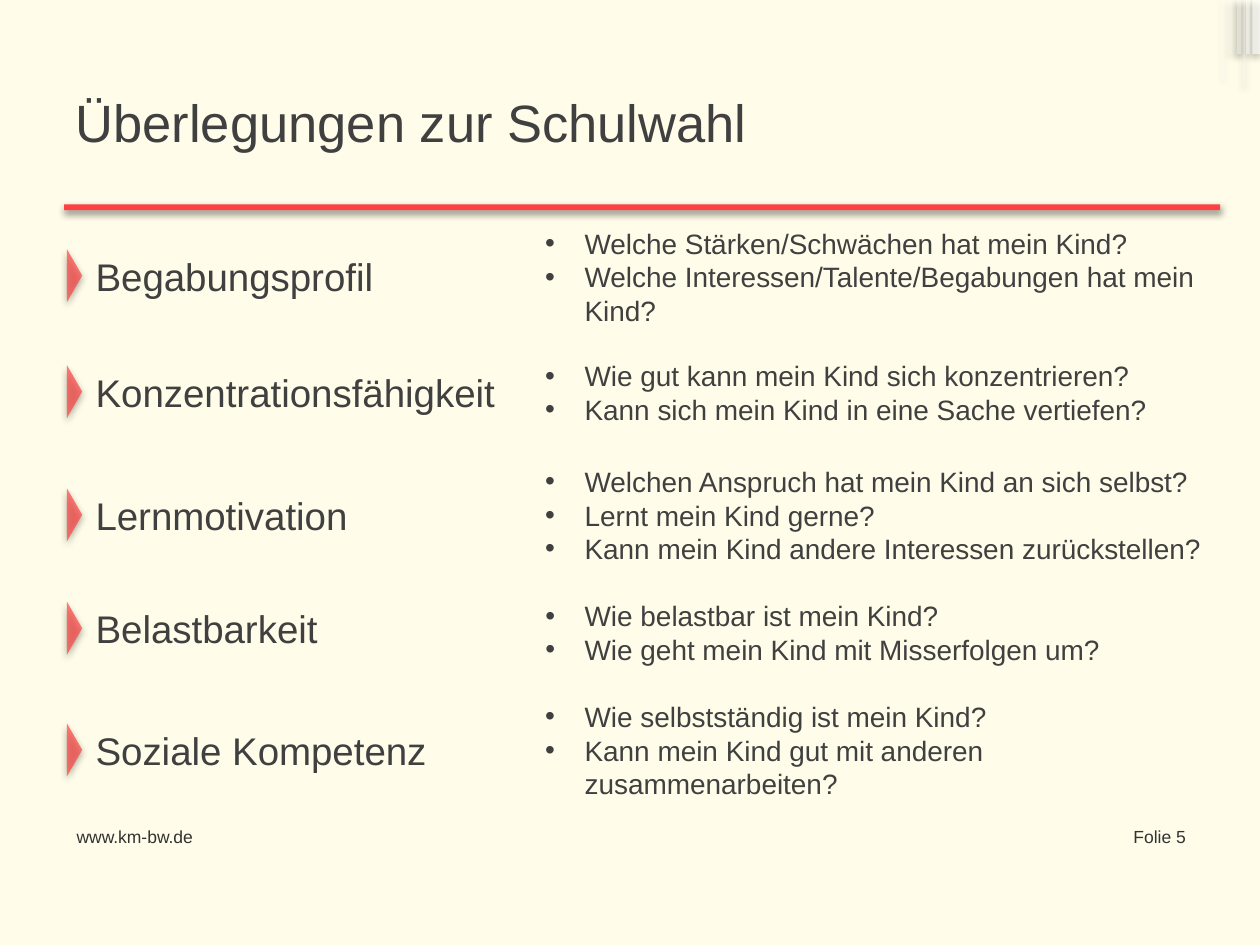
import pptx
import pptx.dml.color
import pptx.enum.shapes
import pptx.enum.text
import pptx.oxml
import pptx.oxml.ns
import pptx.util
from lxml import etree

Pt = pptx.util.Pt
RGB = pptx.dml.color.RGBColor
SHAPE = pptx.enum.shapes.MSO_SHAPE
ALIGN = pptx.enum.text.PP_ALIGN
ANCHOR = pptx.enum.text.MSO_ANCHOR
qn = pptx.oxml.ns.qn

CREAM = RGB(0xFF, 0xFD, 0xE9)
RED = RGB(0xFF, 0x40, 0x40)
WHITE = RGB(0xFF, 0xFF, 0xFF)
DARK = RGB(0x40, 0x40, 0x40)
FOOTER = RGB(0x32, 0x32, 0x32)

ROW_HEIGHT = 57
LABEL_LEFT = 47.5
DETAIL_LEFT = 304.5
ARROW_HEIGHT = 30.2

# top, label, label width, shift of the questions, width of the questions, questions
ROWS = [
    (129, "Begabungsprofil", 182, 0.5, 391.7, [
        "Welche Stärken/Schwächen hat mein Kind?",
        "Welche Interessen/Talente/Begabungen hat mein Kind?"]),
    (195.3, "Konzentrationsfähigkeit", 248.4, 0.5, 391.7, [
        "Wie gut kann mein Kind sich konzentrieren?",
        "Kann sich mein Kind in eine Sache vertiefen?"]),
    (265.7, "Lernmotivation", 183.6, 0, 405.4, [
        "Welchen Anspruch hat mein Kind an sich selbst?",
        "Lernt mein Kind gerne?",
        "Kann mein Kind andere Interessen zurückstellen?"]),
    (330.5, "Belastbarkeit", 181.4, 2.3, 392.4, [
        "Wie belastbar ist mein Kind?",
        "Wie geht mein Kind mit Misserfolgen um?"]),
    (400, "Soziale Kompetenz", 238.3, 0, 415.4, [
        "Wie selbstständig ist mein Kind?",
        "Kann mein Kind gut mit anderen\nzusammenarbeiten?"]),
]

# left, width, height, opacity in percent
CORNER_BARS = [
    (712.1, 2.2, 31, 65), (715.7, 4.3, 31, 65), (698.4, 0.7, 46, 30),
    (710.6, 0.7, 49, 60), (702, 4.3, 31, 20), (707, 2.2, 31, 40),
]


class SlideBuilder:
    font_name = "Arial"

    def __init__(self, slide):
        self.slide = slide

    def add_runs(self, paragraph, text, size, color):
        """Add one run per line, with line breaks in between."""
        for number, line in enumerate(text.split("\n")):
            if number:
                paragraph.add_line_break()
            run = paragraph.add_run()
            run.text = line
            run.font.name = self.font_name
            run.font.size = Pt(size)
            run.font.color.rgb = color

    def title(self, text, left, top, width, height):
        heading = self.slide.shapes.title
        heading.left, heading.top = Pt(left), Pt(top)
        heading.width, heading.height = Pt(width), Pt(height)
        frame = heading.text_frame
        frame.auto_size = pptx.enum.text.MSO_AUTO_SIZE.NONE
        frame.vertical_anchor = ANCHOR.MIDDLE
        paragraph = frame.paragraphs[0]
        paragraph.alignment = ALIGN.LEFT
        paragraph.line_spacing = 0.9
        paragraph.space_after = Pt(4.5)
        self.add_runs(paragraph, text, 30, DARK)

    def footer(self, text, left, width, alignment):
        note = self.slide.shapes.add_textbox(Pt(left), Pt(468.7), Pt(width), Pt(28))
        note.text_frame.word_wrap = True
        paragraph = note.text_frame.paragraphs[0]
        paragraph.alignment = alignment
        self.add_runs(paragraph, text, 10, FOOTER)

    def shape(self, kind, left, top, width, height, fill=None, opacity=100):
        shape = self.slide.shapes.add_shape(kind, Pt(left), Pt(top), Pt(width), Pt(height))
        shape.shadow.inherit = False
        shape.line.fill.background()
        if fill is None:
            shape.fill.background()
        else:
            shape.fill.solid()
            shape.fill.fore_color.rgb = fill
        if opacity < 100:
            color = shape.fill._xPr.find(".//" + qn("a:srgbClr"))
            etree.SubElement(color, qn("a:alpha"), val=str(opacity * 1000))
        return shape

    def shadowed(self, kind, left, top, width, height, fill, opacity=100, shade=45):
        """Add a shape with a soft shadow below it."""
        shape = self.shape(kind, left, top, width, height, fill, opacity)
        effects = shape._element.spPr.find(qn("a:effectLst"))
        shadow = etree.SubElement(effects, qn("a:outerShdw"), blurRad=str(Pt(4)),
                                  dist=str(Pt(2)), dir="5400000", rotWithShape="0")
        color = etree.SubElement(shadow, qn("a:srgbClr"), val="000000")
        etree.SubElement(color, qn("a:alpha"), val=str(shade * 1000))
        return shape

    def panel(self, left, top, width, lines, size, fill=None, bulleted=False):
        panel = self.shape(SHAPE.ROUNDED_RECTANGLE, left, top, width, ROW_HEIGHT, fill)
        panel.adjustments[0] = 0
        frame = panel.text_frame
        frame.word_wrap = True
        frame.vertical_anchor = ANCHOR.MIDDLE
        for number, line in enumerate(lines):
            paragraph = frame.add_paragraph() if number else frame.paragraphs[0]
            paragraph.alignment = ALIGN.LEFT
            if bulleted:
                self.bullet(paragraph)
            self.add_runs(paragraph, line, size, DARK)

    def bullet(self, paragraph):
        properties = paragraph._p.get_or_add_pPr()
        properties.set("marL", str(Pt(22.5)))
        properties.set("indent", str(Pt(-22.5)))
        color = etree.SubElement(properties, qn("a:buClr"))
        etree.SubElement(color, qn("a:srgbClr"), val=str(DARK))
        etree.SubElement(properties, qn("a:buFont"), typeface=self.font_name)
        etree.SubElement(properties, qn("a:buChar"), char="•")

    def arrow(self, top):
        arrow = self.shadowed(SHAPE.PENTAGON, 38.2, top, 8.8, ARROW_HEIGHT, RED, opacity=68)
        arrow.adjustments[0] = 0.99


def main():
    presentation = pptx.Presentation()
    presentation.slide_width, presentation.slide_height = Pt(720), Pt(540)
    slide = presentation.slides.add_slide(presentation.slide_layouts[5])
    slide.background.fill.solid()
    slide.background.fill.fore_color.rgb = CREAM

    builder = SlideBuilder(slide)
    for left, width, height, opacity in CORNER_BARS:
        builder.shadowed(SHAPE.RECTANGLE, left, 0, width, height, WHITE, opacity, shade=40)
    builder.footer("www.km-bw.de", 36.7, 95.8, ALIGN.LEFT)
    builder.footer("Folie 5", 614.9, 69.8, ALIGN.RIGHT)
    builder.title("Überlegungen zur Schulwahl", 36, 43.9, 648, 55.4)

    for top, label, label_width, shift, detail_width, questions in ROWS:
        builder.panel(LABEL_LEFT, top, label_width, [label], 22)
        builder.panel(DETAIL_LEFT, top + shift, detail_width, questions, 16, CREAM, bulleted=True)
        builder.arrow(top + (ROW_HEIGHT - ARROW_HEIGHT) / 2)
    builder.shadowed(SHAPE.RECTANGLE, 36.7, 116.8, 660.5, 3.4, RED)

    presentation.save("out.pptx")


if __name__ == "__main__":
    main()
